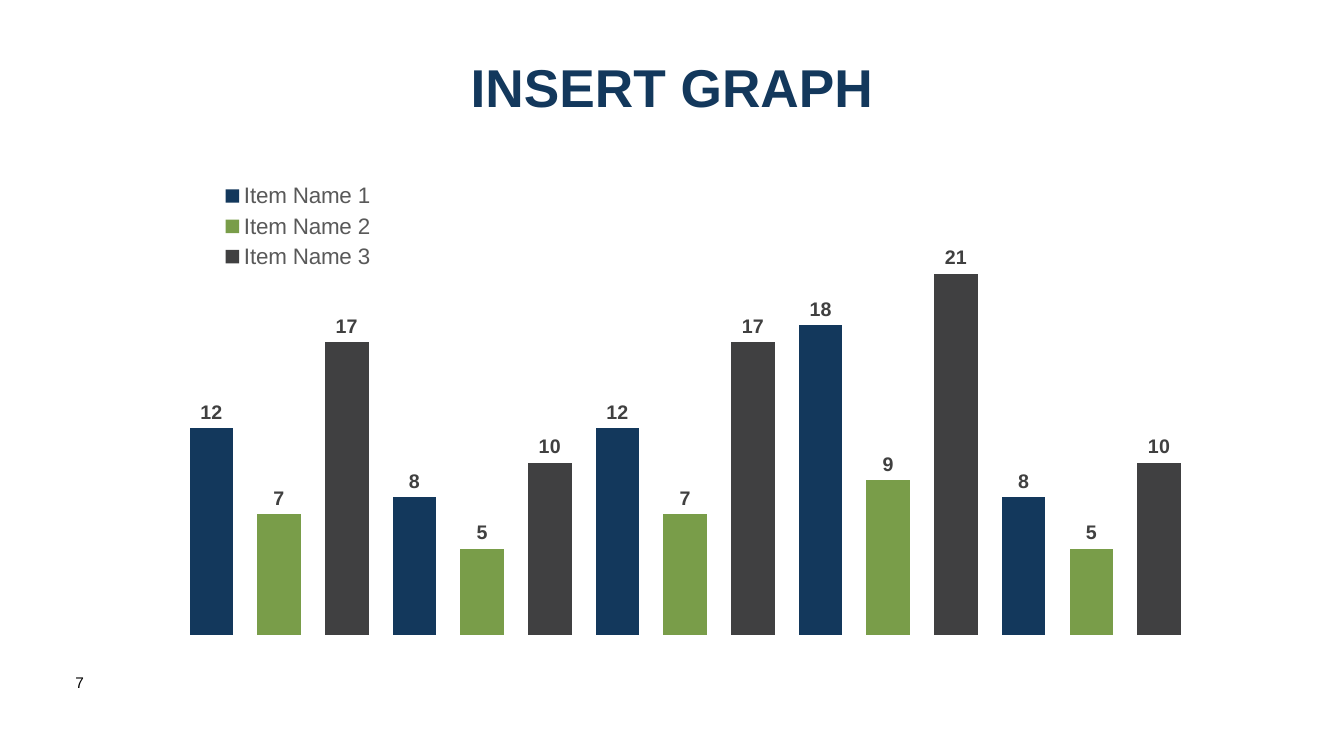
from lxml.etree import SubElement
from pptx import Presentation
from pptx.chart.data import CategoryChartData
from pptx.dml.color import RGBColor
from pptx.enum.chart import XL_CHART_TYPE as ChartType
from pptx.enum.chart import XL_LABEL_POSITION as LabelPos
from pptx.enum.chart import XL_LEGEND_POSITION as LegendPos
from pptx.enum.text import MSO_ANCHOR, MSO_AUTO_SIZE, PP_ALIGN
from pptx.oxml.ns import qn
from pptx.util import Inches, Pt

# Content
TITLE = "INSERT GRAPH"
PAGE = "7"
ITEMS = ["Item Name 1", "Item Name 2", "Item Name 3"]
GROUPS = [(12, 7, 17), (8, 5, 10), (12, 7, 17), (18, 9, 21), (8, 5, 10)]

NAVY = RGBColor(0x13, 0x38, 0x5C)
GREEN = RGBColor(0x79, 0x9D, 0x49)
CHARCOAL = RGBColor(0x40, 0x40, 0x41)
LABEL_GRAY = RGBColor(0x40, 0x40, 0x40)
LEGEND_GRAY = RGBColor(0x59, 0x59, 0x59)
BLACK = RGBColor(0, 0, 0)
ITEM_COLORS = [NAVY, GREEN, CHARCOAL]

# Places: inches on the slide, shares of the chart inside it
TITLE_BOX = (2.48, 0.52, 8.37, 0.67)
CHART_BOX = (0.65, 1.46, 11.82, 5.07)
PAGE_BOX = (0.65, 6.63, 0.58, 0.54)
PLOT_AREA = {"x": 0.094, "y": 0.113, "w": 0.852, "h": 0.841}
LEGEND_AREA = {"x": 0.12, "y": 0.06, "w": 0.15, "h": 0.19}
LABEL_LIFT = {"x": 0, "y": -0.06}


def style(font, size, color, bold=False):
    values = {"name": "Arial", "size": Pt(size), "bold": bold}
    for name, value in values.items():
        setattr(font, name, value)
    font.color.rgb = color


def set_layout(parent, after, area, inner=False, edge=True):
    """Give a chart part a manual layout, placed behind the child `after`."""
    for old in parent.findall(qn("c:layout")):
        parent.remove(old)
    layout = SubElement(parent, qn("c:layout"))
    manual = SubElement(layout, qn("c:manualLayout"))
    if inner:
        SubElement(manual, qn("c:layoutTarget")).set("val", "inner")
    if edge:
        for mode in ("xMode", "yMode"):
            SubElement(manual, qn("c:" + mode)).set("val", "edge")
    for key, share in area.items():
        SubElement(manual, qn("c:" + key)).set("val", str(share))
    if after:
        parent.find(qn(after)).addnext(layout)
    else:
        parent.insert(0, layout)


prs = Presentation()
prs.slide_width, prs.slide_height = Inches(13.33), Inches(7.5)
s = prs.slides.add_slide(prs.slide_layouts[5])

# Title
title = s.shapes.title
title.left, title.top, title.width, title.height = map(Inches, TITLE_BOX)
tf = title.text_frame
tf.text = TITLE
tf.auto_size = MSO_AUTO_SIZE.NONE
tf.vertical_anchor = MSO_ANCHOR.MIDDLE
p = tf.paragraphs[0]
p.alignment = PP_ALIGN.CENTER
style(p.runs[0].font, 38, NAVY, bold=True)

# Chart data: each bar has its own category, the items take turns
count = len(ITEMS)
bars = [value for group in GROUPS for value in group]
data = CategoryChartData()
data.categories = [str(n + 1) for n in range(len(bars))]
order = list(reversed(range(count)))
for item in order:
    data.add_series(ITEMS[item], [v if n % count == item else None
                                  for n, v in enumerate(bars)])
chart = s.shapes.add_chart(ChartType.COLUMN_STACKED,
                           *map(Inches, CHART_BOX), data).chart
chart.has_title = False
style(chart.font, 10, BLACK)

# Axes and plot
axis = chart.value_axis
axis.minimum_scale, axis.maximum_scale = 0, 25
axis.has_major_gridlines = False
axis.visible = chart.category_axis.visible = False
plot = chart.plots[0]
plot.gap_width, plot.overlap = 55, 100
plot.vary_by_categories = False
set_layout(chart.plots[0]._element.getparent(), None, PLOT_AREA, inner=True)

# Bars with their values lifted above them
for item, series in zip(order, plot.series):
    series.format.fill.solid()
    series.format.fill.fore_color.rgb = ITEM_COLORS[item]
    labels = series.data_labels
    labels.show_value = True
    labels.position = LabelPos.INSIDE_END
    style(labels.font, 14, LABEL_GRAY, bold=True)
    for n in range(item, len(bars), count):
        label = series.points[n].data_label
        label.position = LabelPos.INSIDE_END
        style(label.font, 14, LABEL_GRAY, bold=True)
        set_layout(labels._element.find(f"{qn('c:dLbl')}[{n // count + 1}]"),
                   "c:idx", LABEL_LIFT, edge=False)

# Legend
chart.has_legend = True
legend = chart.legend
legend.position = LegendPos.RIGHT
legend.include_in_layout = False
style(legend.font, 16, LEGEND_GRAY)
set_layout(legend._element, "c:legendPos", LEGEND_AREA)

# Page number
tf = s.shapes.add_textbox(*map(Inches, PAGE_BOX)).text_frame
tf.word_wrap = True
tf.text = PAGE
style(tf.paragraphs[0].runs[0].font, 11, BLACK)

prs.save("out.pptx")
